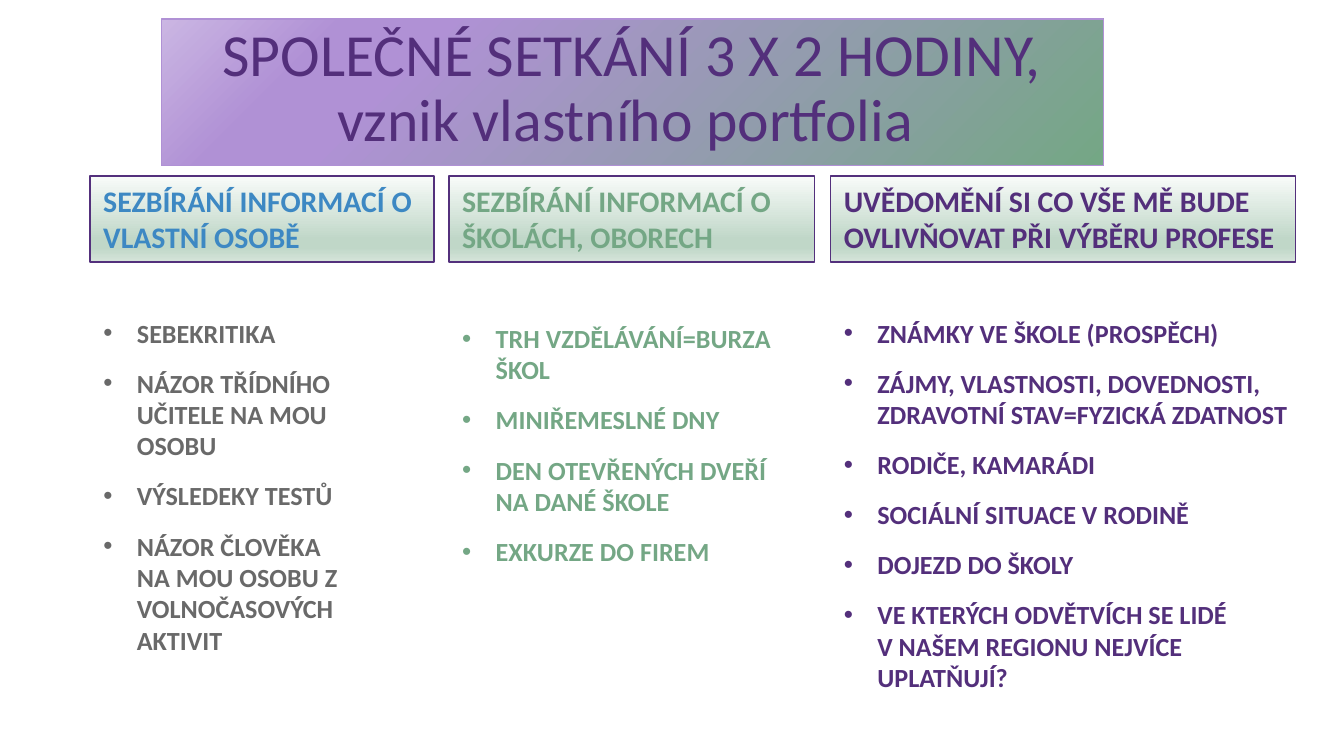
from dataclasses import dataclass

import pptx
import pptx.dml.color
import pptx.enum.shapes
import pptx.enum.text
import pptx.util
from lxml import etree
from pptx.oxml.ns import qn
from pptx.util import Inches


@dataclass(frozen=True)
class Theme:
    font: str = "Calibri"
    purple: str = "532F7B"
    green: str = "74A785"
    blue: str = "3D88C3"
    grey: str = "696969"
    title_line: str = "B091D5"
    heading_line: str = "53307C"
    title_stops: tuple = ((0, "74A785"), (74, "B091D5"), (83, "B091D5"), (100, "CBB6E3"))
    heading_stops: tuple = ((0, "F8FBF9"), (74, "C0D7C8"), (83, "C0D7C8"), (100, "D5E4DA"))
    title_size: int = 32
    heading_size: int = 16
    bullet_size: int = 14


THEME = Theme()

TITLE = "SPOLEČNÉ SETKÁNÍ 3 X 2 HODINY,\nvznik vlastního portfolia "


@dataclass(frozen=True)
class Column:
    left: float
    heading: str
    heading_width: float
    heading_color: str
    list_top: float
    list_width: float
    list_height: float
    list_color: str
    items: tuple


COLUMNS = (
    Column(0.67, "SEZBÍRÁNÍ INFORMACÍ O VLASTNÍ OSOBĚ", 2.56, THEME.blue,
           2.31, 2.05, 2.66, THEME.grey,
           ("SEBEKRITIKA",
            "NÁZOR TŘÍDNÍHO UČITELE NA MOU OSOBU",
            "VÝSLEDEKY TESTŮ",
            "NÁZOR ČLOVĚKA NA MOU OSOBU Z VOLNOČASOVÝCH AKTIVIT")),
    Column(3.34, "SEZBÍRÁNÍ INFORMACÍ O ŠKOLÁCH, OBORECH", 2.72, THEME.green,
           2.35, 2.62, 2.2, THEME.green,
           ("TRH VZDĚLÁVÁNÍ=BURZA ŠKOL",
            "MINIŘEMESLNÉ DNY",
            "DEN OTEVŘENÝCH DVEŘÍ NA DANÉ ŠKOLE",
            "EXKURZE DO FIREM")),
    Column(6.18, "UVĚDOMĚNÍ SI CO VŠE MĚ BUDE OVLIVŇOVAT PŘI VÝBĚRU PROFESE", 3.46, THEME.purple,
           2.31, 3.73, 3.16, THEME.purple,
           ("ZNÁMKY VE ŠKOLE (PROSPĚCH)",
            "ZÁJMY, VLASTNOSTI, DOVEDNOSTI, ZDRAVOTNÍ STAV=FYZICKÁ ZDATNOST",
            "RODIČE, KAMARÁDI",
            "SOCIÁLNÍ SITUACE V RODINĚ",
            "DOJEZD DO ŠKOLY",
            "VE KTERÝCH ODVĚTVÍCH SE LIDÉ\nV NAŠEM REGIONU NEJVÍCE UPLATŇUJÍ?")),
)


def rgb(color):
    return pptx.dml.color.RGBColor.from_string(color)


def set_font(paragraph, size, color, bold):
    font = paragraph.font
    font.name = THEME.font
    font.size = pptx.util.Pt(size)
    font.bold = bold
    font.color.rgb = rgb(color)


def set_gradient(shape, stops, radial=False):
    """Fill from the bottom-right corner if radial, otherwise from top to bottom."""
    shape.fill.gradient()
    gradient = shape._element.spPr.find(qn("a:gradFill"))
    for child in list(gradient):
        gradient.remove(child)
    stop_list = etree.SubElement(gradient, qn("a:gsLst"))
    for position, color in stops:
        stop = etree.SubElement(stop_list, qn("a:gs"), pos=str(position * 1000))
        etree.SubElement(stop, qn("a:srgbClr"), val=color)
    if radial:
        circle = etree.SubElement(gradient, qn("a:path"), path="circle")
        etree.SubElement(circle, qn("a:fillToRect"), l="100000", t="100000")
    else:
        etree.SubElement(gradient, qn("a:lin"), ang="5400000", scaled="0")


def set_outline(shape, color):
    shape.line.color.rgb = rgb(color)
    shape.line.width = pptx.util.Pt(0.75)


def add_title(slide):
    title = slide.shapes.title
    title.left, title.top = Inches(1.2), Inches(0.14)
    title.width, title.height = Inches(7.01), Inches(1.09)
    set_gradient(title, THEME.title_stops, radial=True)
    set_outline(title, THEME.title_line)
    frame = title.text_frame
    frame.auto_size = pptx.enum.text.MSO_AUTO_SIZE.NONE
    frame.vertical_anchor = pptx.enum.text.MSO_ANCHOR.MIDDLE
    frame.margin_top, frame.margin_bottom = Inches(0.03), Inches(0.07)
    paragraph = frame.paragraphs[0]
    paragraph.text = TITLE
    paragraph.alignment = pptx.enum.text.PP_ALIGN.CENTER
    paragraph.line_spacing = 0.9
    set_font(paragraph, THEME.title_size, THEME.purple, False)


def add_heading(slide, column):
    heading = slide.shapes.add_shape(
        pptx.enum.shapes.MSO_SHAPE.RECTANGLE,
        Inches(column.left), Inches(1.31), Inches(column.heading_width), Inches(0.64))
    heading.shadow.inherit = False
    set_gradient(heading, THEME.heading_stops)
    set_outline(heading, THEME.heading_line)
    frame = heading.text_frame
    frame.word_wrap = True
    frame.auto_size = pptx.enum.text.MSO_AUTO_SIZE.SHAPE_TO_FIT_TEXT
    frame.vertical_anchor = pptx.enum.text.MSO_ANCHOR.TOP
    paragraph = frame.paragraphs[0]
    paragraph.text = column.heading
    paragraph.alignment = pptx.enum.text.PP_ALIGN.LEFT
    set_font(paragraph, THEME.heading_size, column.heading_color, True)


def add_bullet(paragraph):
    properties = paragraph._p.get_or_add_pPr()
    properties.set("marL", str(Inches(0.25)))
    properties.set("indent", str(-Inches(0.25)))
    etree.SubElement(properties, qn("a:buFont"), typeface="Arial")
    etree.SubElement(properties, qn("a:buChar"), char="•")


def add_list(slide, column):
    box = slide.shapes.add_textbox(
        Inches(column.left), Inches(column.list_top),
        Inches(column.list_width), Inches(column.list_height))
    frame = box.text_frame
    frame.word_wrap = True
    for index, item in enumerate(column.items):
        paragraph = frame.add_paragraph() if index else frame.paragraphs[0]
        paragraph.text = item
        add_bullet(paragraph)
        if index:
            paragraph.space_before = pptx.util.Pt(10)
        set_font(paragraph, THEME.bullet_size, column.list_color, True)


def main():
    presentation = pptx.Presentation()
    presentation.slide_width = Inches(10)
    presentation.slide_height = presentation.slide_width * 9 // 16
    slide = presentation.slides.add_slide(presentation.slide_layouts[5])
    add_title(slide)
    for column in COLUMNS:
        add_list(slide, column)
    for column in COLUMNS:
        add_heading(slide, column)
    presentation.save("out.pptx")


if __name__ == "__main__":
    main()
